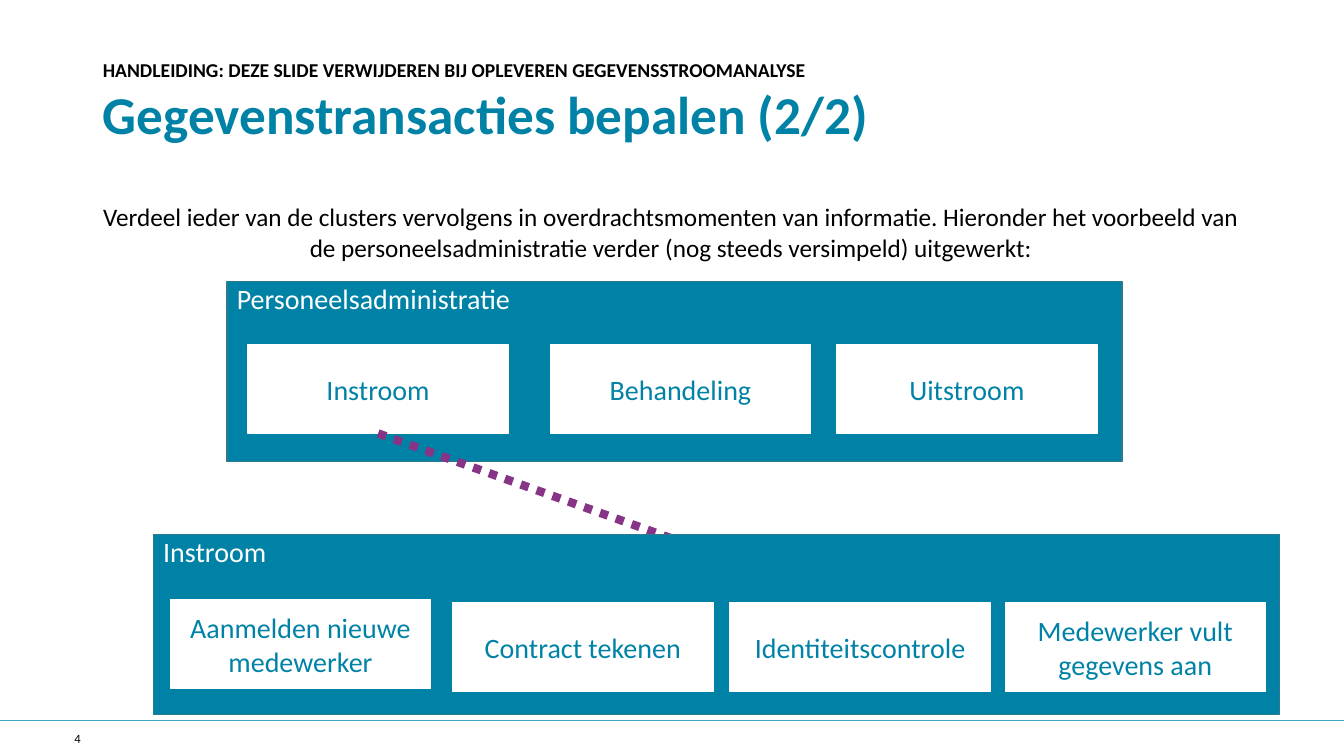
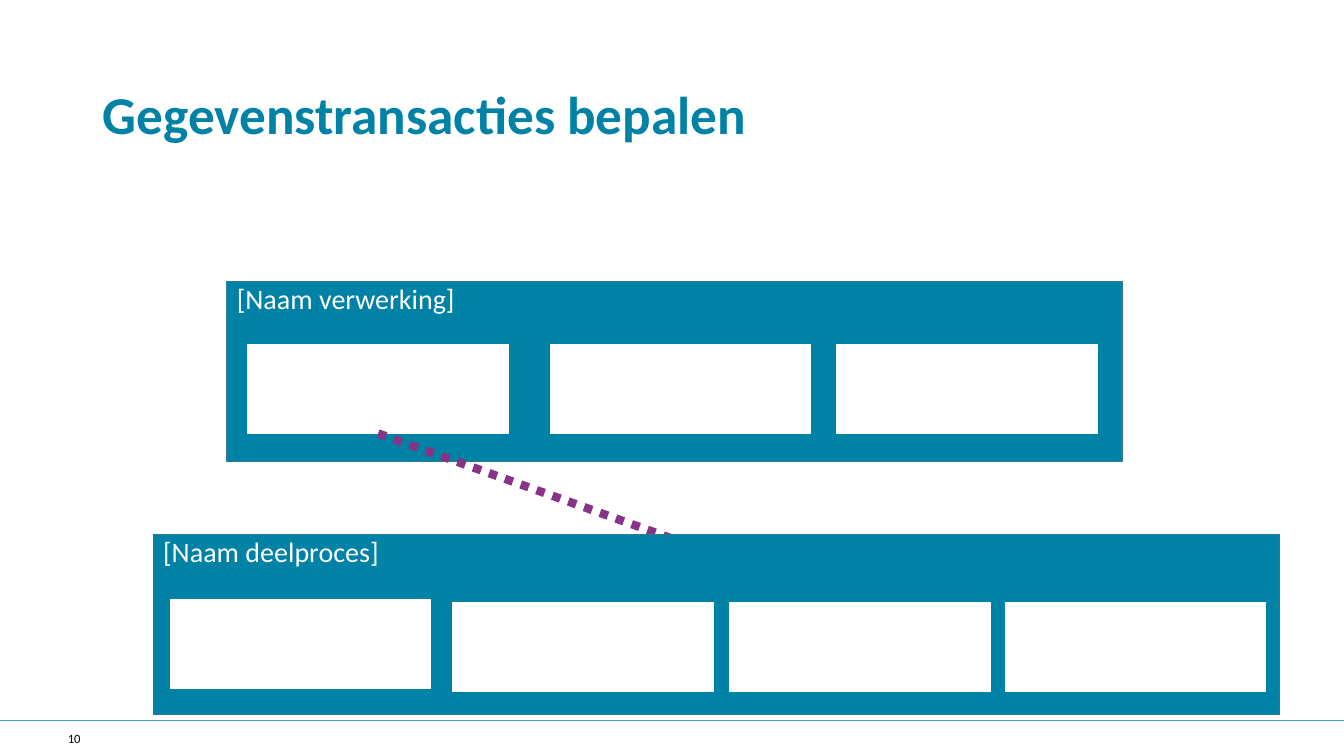
from dataclasses import dataclass

from pptx import Presentation
from pptx import util as u
from pptx.dml.color import RGBColor
from pptx.enum import dml, shapes, text
from pptx.oxml import xmlchemy
from pptx.oxml.ns import qn
from pptx.slide import Slide
from pptx.text.text import TextFrame

PX = 9144
FONT = "Calibri"
TEAL = RGBColor(0x00, 0x82, 0xA6)
EDGE = RGBColor(0x2F, 0x79, 0x8F)
RULE = RGBColor(0x3F, 0xA3, 0xC1)
PURPLE = RGBColor(0x88, 0x34, 0x86)
WHITE = RGBColor(0xFF, 0xFF, 0xFF)
BLACK = RGBColor(0x00, 0x00, 0x00)

SLIDE_WIDTH, SLIDE_HEIGHT = 1333, 750
PANEL_HEIGHT = 179
STEP_WIDTH, STEP_HEIGHT = 258, 88
LEFT, CENTER, RIGHT = text.PP_ALIGN.LEFT, text.PP_ALIGN.CENTER, text.PP_ALIGN.RIGHT
TOP, MIDDLE = text.MSO_ANCHOR.TOP, text.MSO_ANCHOR.MIDDLE


@dataclass(frozen=True)
class Area:
    left: int
    top: int
    width: int
    height: int

    def emu(self) -> tuple[int, ...]:
        return tuple(n * PX for n in (self.left, self.top, self.width, self.height))


@dataclass(frozen=True)
class Style:
    size: int
    color: RGBColor
    align: text.PP_ALIGN = LEFT
    anchor: text.MSO_ANCHOR = TOP
    bold: bool = False


@dataclass(frozen=True)
class Panel:
    area: Area
    steps: tuple[tuple[int, int], ...]


@dataclass(frozen=True)
class Content:
    number: str
    title: str
    panel_names: tuple[str, str]
    step_names: tuple[tuple[str, ...], tuple[str, ...]]
    kicker: str = ""
    intro: str = ""


KICKER_AREA = Area(102, 57, 1127, 19)
TITLE_AREA = Area(102, 81, 1127, 59)
INTRO_AREA = Area(102, 200, 1127, 60)
NUMBER_AREA = Area(10, 721, 70, 24)

KICKER = Style(14, BLACK, bold=True)
TITLE = Style(38, TEAL, bold=True)
INTRO = Style(18, BLACK, CENTER)
NUMBER = Style(9, BLACK, RIGHT, MIDDLE)
PANEL_NAME = Style(20, WHITE)
STEP_NAME = Style(20, TEAL, CENTER, MIDDLE)

PROCESS = Panel(
    Area(225, 279, 888, PANEL_HEIGHT),
    ((246, 342), (546, 342), (830, 342)),
)
SUBPROCESS = Panel(
    Area(152, 530, 1117, PANEL_HEIGHT),
    ((169, 595), (449, 598), (724, 598), (997, 598)),
)

CONTENTS = (
    Content(
        "4",
        "Gegevenstransacties bepalen (2/2)",
        ("Personeelsadministratie", "Instroom"),
        (
            ("Instroom", "Behandeling", "Uitstroom"),
            (
                "Aanmelden nieuwe medewerker",
                "Contract tekenen",
                "Identiteitscontrole",
                "Medewerker vult gegevens aan",
            ),
        ),
        "HANDLEIDING: DEZE SLIDE VERWIJDEREN BIJ OPLEVEREN GEGEVENSSTROOMANALYSE",
        "Verdeel ieder van de clusters vervolgens in overdrachtsmomenten van informatie. "
        "Hieronder het voorbeeld van de personeelsadministratie verder "
        "(nog steeds versimpeld) uitgewerkt:",
    ),
    Content(
        "10",
        "Gegevenstransacties bepalen",
        ("[Naam verwerking]", "[Naam deelproces]"),
        (("",) * 3, ("",) * 4),
    ),
)


def write(frame: TextFrame, words: str, style: Style) -> None:
    frame.word_wrap = True
    frame.vertical_anchor = style.anchor
    para = frame.paragraphs[0]
    para.text = words
    para.alignment = style.align
    para.font.name = FONT
    para.font.size = u.Pt(style.size)
    para.font.bold = style.bold
    para.font.color.rgb = style.color


def add_text(page: Slide, area: Area, words: str, style: Style) -> None:
    if not words:
        return
    frame = page.shapes.add_textbox(*area.emu()).text_frame
    frame.margin_left = frame.margin_right = 0
    frame.margin_top = frame.margin_bottom = 0
    write(frame, words, style)


def add_box(
    page: Slide, area: Area, fill: RGBColor, edge: RGBColor, words: str, style: Style
) -> None:
    box = page.shapes.add_shape(shapes.MSO_SHAPE.RECTANGLE, *area.emu())
    box.shadow.inherit = False
    box.fill.solid()
    box.fill.fore_color.rgb = fill
    box.line.color.rgb = edge
    box.line.width = u.Pt(1)
    if words:
        box.text_frame.margin_top = box.text_frame.margin_bottom = 0
        write(box.text_frame, words, style)


def add_line(
    page: Slide,
    start: tuple[int, int],
    end: tuple[int, int],
    color: RGBColor,
    width: int,
    dash: dml.MSO_LINE = dml.MSO_LINE.SOLID,
) -> None:
    ends = (n * PX for n in (*start, *end))
    line = page.shapes.add_connector(shapes.MSO_CONNECTOR.STRAIGHT, *ends)
    line.line.color.rgb = color
    line.line.width = u.Pt(width)
    line.line.dash_style = dash
    properties = line._element.spPr
    properties.append(xmlchemy.OxmlElement("a:effectLst"))


def add_panel(page: Slide, panel: Panel, name: str, step_names: tuple[str, ...]) -> None:
    add_box(page, panel.area, TEAL, EDGE, name, PANEL_NAME)
    for (left, top), step_name in zip(panel.steps, step_names):
        area = Area(left, top, STEP_WIDTH, STEP_HEIGHT)
        add_box(page, area, WHITE, WHITE, step_name, STEP_NAME)


def add_page(deck: Presentation, content: Content) -> None:
    page = deck.slides.add_slide(deck.slide_layouts[6])
    add_line(page, (0, 715), (SLIDE_WIDTH, 715), RULE, 1)
    add_text(page, INTRO_AREA, content.intro, INTRO)
    add_text(page, NUMBER_AREA, content.number, NUMBER)
    add_text(page, KICKER_AREA, content.kicker, KICKER)
    add_text(page, TITLE_AREA, content.title, TITLE)
    add_panel(page, PROCESS, content.panel_names[0], content.step_names[0])
    add_line(page, (375, 430), (674, 537), PURPLE, 6, dml.MSO_LINE.ROUND_DOT)
    add_panel(page, SUBPROCESS, content.panel_names[1], content.step_names[1])


def main() -> None:
    deck = Presentation()
    deck.slide_width = SLIDE_WIDTH * PX
    deck.slide_height = SLIDE_HEIGHT * PX
    for content in CONTENTS:
        add_page(deck, content)
    deck.save("out.pptx")


if __name__ == "__main__":
    main()
